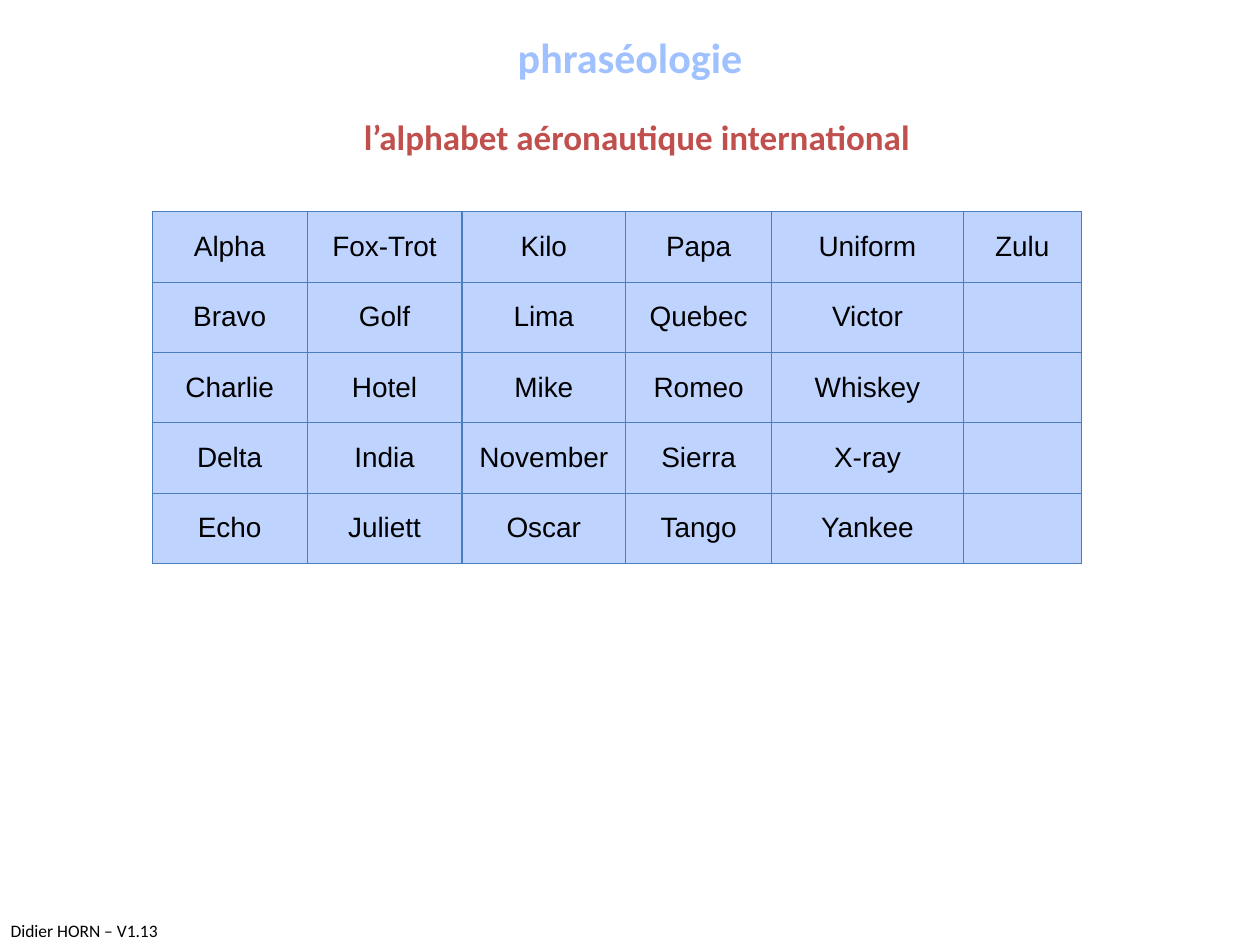
from dataclasses import dataclass

from lxml.etree import SubElement
from pptx import Presentation
from pptx.dml.color import RGBColor
from pptx.enum.text import MSO_ANCHOR, PP_ALIGN
from pptx.oxml.ns import qn
from pptx.util import Pt


@dataclass(frozen=True)
class Theme:
    title: str = "A0C1FF"
    subtitle: str = "C0504D"
    text: str = "000000"
    cell: str = "BFD3FF"
    border: str = "4B7EBC"
    heading_font: str = "Calibri"
    table_font: str = "Arial"
    title_size: float = 24
    subtitle_size: float = 20
    table_size: float = 16
    footer_size: float = 10
    border_width: float = 0.75


THEME = Theme()
ROWS = 5
COL_WIDTHS = [88.5, 88.5, 93.5, 83.5, 109.5, 67.5]
WORDS = (
    "Alpha Bravo Charlie Delta Echo Fox-Trot Golf Hotel India Juliett "
    "Kilo Lima Mike November Oscar Papa Quebec Romeo Sierra Tango "
    "Uniform Victor Whiskey X-ray Yankee Zulu"
).split()


def set_font(font, name, size, color, bold=False):
    for key, value in {"name": name, "size": Pt(size), "bold": bold}.items():
        setattr(font, key, value)
    font.color.rgb = RGBColor.from_string(color)


def add_text(slide, box, text, size, color, **frame):
    s = slide.shapes.add_textbox(*map(Pt, box))
    tf = s.text_frame
    for key, value in frame.items():
        setattr(tf, key, value)
    p = tf.paragraphs[0]
    r = p.add_run()
    r.text = text
    set_font(r.font, THEME.heading_font, size, color)
    return p


def add_heading(slide, box, text, size, color):
    p = add_text(slide, box, text, size, color,
                 word_wrap=True, vertical_anchor=MSO_ANCHOR.MIDDLE)
    p.alignment = PP_ALIGN.CENTER
    p.space_after = Pt(12)
    p.runs[0].font.bold = True


def add_footer(slide, box, text):
    add_text(slide, box, text, THEME.footer_size, THEME.text, word_wrap=False)


def add_borders(cell):
    tc_pr = cell._tc.get_or_add_tcPr()
    for side in ("lnL", "lnR", "lnT", "lnB"):
        ln = SubElement(tc_pr, qn(f"a:{side}"), w=str(Pt(THEME.border_width)))
        fill = SubElement(ln, qn("a:solidFill"))
        SubElement(fill, qn("a:srgbClr"), val=THEME.border)


def style_cell(cell, text):
    add_borders(cell)
    cell.fill.solid()
    cell.fill.fore_color.rgb = RGBColor.from_string(THEME.cell)
    cell.vertical_anchor = MSO_ANCHOR.MIDDLE
    cell.text = text
    p = cell.text_frame.paragraphs[0]
    p.alignment = PP_ALIGN.CENTER
    for r in p.runs:
        set_font(r.font, THEME.table_font, THEME.table_size, THEME.text)


def add_alphabet(slide, box):
    left, top, width, height = box
    table = slide.shapes.add_table(ROWS, len(COL_WIDTHS), *map(Pt, box)).table
    for flag in ("first_row", "horz_banding"):
        setattr(table, flag, False)
    for column, share in zip(table.columns, COL_WIDTHS):
        column.width = Pt(width * share / sum(COL_WIDTHS))
    for row in table.rows:
        row.height = Pt(height / ROWS)
    for c in range(len(COL_WIDTHS)):
        for r in range(ROWS):
            i = c * ROWS + r
            style_cell(table.cell(r, c), WORDS[i] if i < len(WORDS) else "")


def main():
    prs = Presentation()
    prs.slide_width, prs.slide_height = Pt(720), Pt(540)
    slide = prs.slides.add_slide(prs.slide_layouts[6])
    add_footer(slide, (-1, 522, 108, 19.5), "Didier HORN – V1.13 ©")
    add_heading(slide, (66, 55.5, 596, 44.5), "l’alphabet aéronautique international",
                THEME.subtitle_size, THEME.subtitle)
    add_alphabet(slide, (87, 121, 531, 201))
    add_heading(slide, (78, 4.5, 564, 55.5), "phraséologie",
                THEME.title_size, THEME.title)
    prs.save("out.pptx")


if __name__ == "__main__":
    main()
